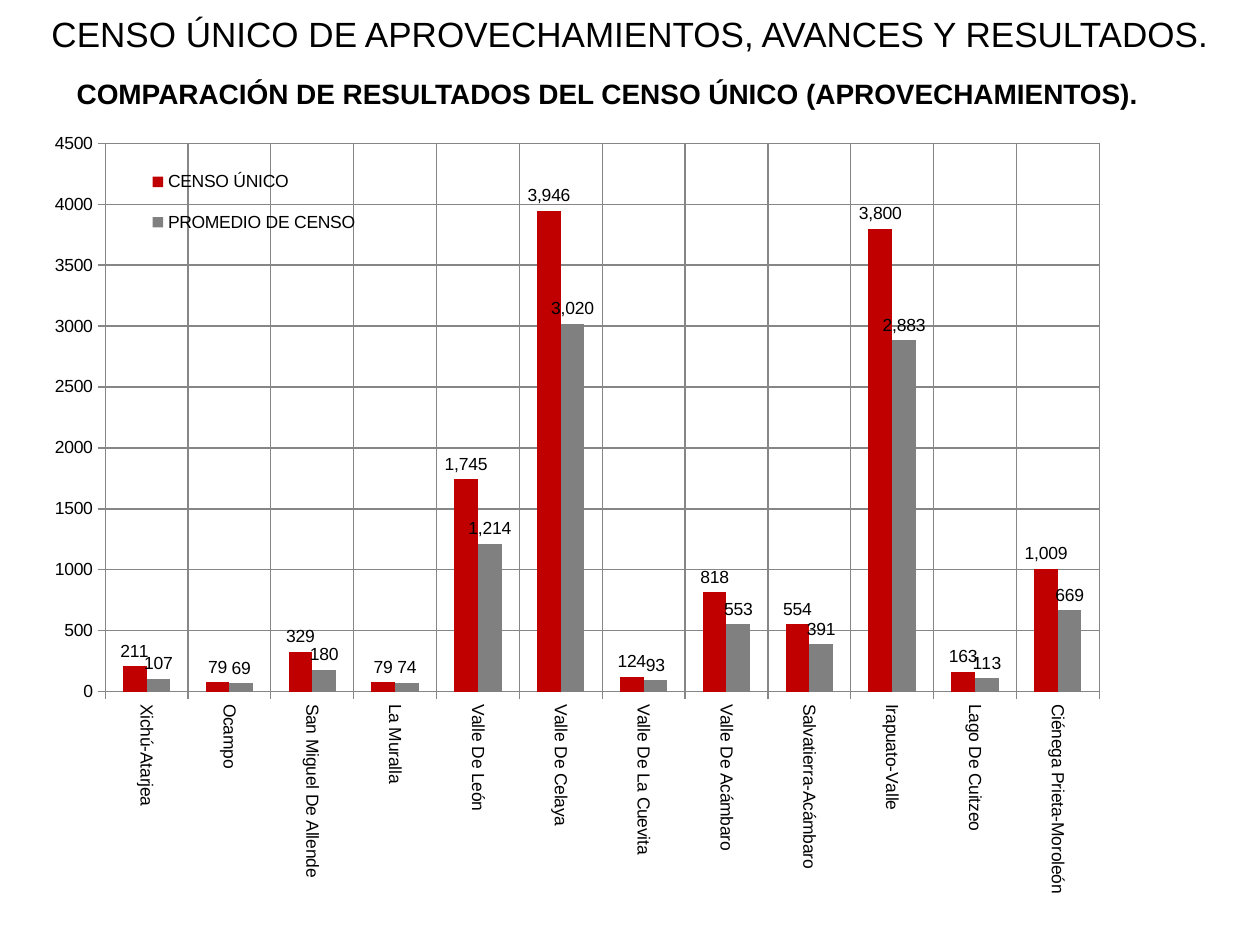
from lxml import etree
from pptx import Presentation
from pptx.chart.data import CategoryChartData
from pptx.dml.color import RGBColor
from pptx.enum.chart import (XL_CHART_TYPE, XL_LABEL_POSITION,
                             XL_LEGEND_POSITION, XL_TICK_MARK)
from pptx.enum.text import MSO_ANCHOR, PP_ALIGN
from pptx.oxml.ns import qn
from pptx.util import Pt

COLUMNS = XL_CHART_TYPE.COLUMN_CLUSTERED
LABEL_ABOVE = XL_LABEL_POSITION.OUTSIDE_END
LEGEND_RIGHT = XL_LEGEND_POSITION.RIGHT
TICK_OUT, TICK_NONE = XL_TICK_MARK.OUTSIDE, XL_TICK_MARK.NONE
MIDDLE, TOP = MSO_ANCHOR.MIDDLE, MSO_ANCHOR.TOP
CENTER, LEFT = PP_ALIGN.CENTER, PP_ALIGN.LEFT

FONT = "Arial"
BLACK = RGBColor(0x00, 0x00, 0x00)
RED = RGBColor(0xC0, 0x00, 0x00)
GRAY = RGBColor(0x80, 0x80, 0x80)
GRID_GRAY = RGBColor(0x86, 0x86, 0x86)

CENSUS = [
    ("Xichú-Atarjea", 211, 107),
    ("Ocampo", 79, 69),
    ("San Miguel De Allende", 329, 180),
    ("La Muralla", 79, 74),
    ("Valle De León", 1745, 1214),
    ("Valle De Celaya", 3946, 3020),
    ("Valle De La Cuevita", 124, 93),
    ("Valle De Acámbaro", 818, 553),
    ("Salvatierra-Acámbaro", 554, 391),
    ("Irapuato-Valle", 3800, 2883),
    ("Lago De Cuitzeo", 163, 113),
    ("Ciénega Prieta-Moroleón", 1009, 669),
]
SERIES = [("CENSO ÚNICO", RED), ("PROMEDIO DE CENSO", GRAY)]


def style_font(font, size, bold=False):
    font.name = FONT
    font.size = Pt(size)
    font.bold = bold
    font.color.rgb = BLACK


def add_heading(slide, text, box, size, bold=False, align=LEFT, anchor=TOP):
    shape = slide.shapes.add_textbox(*map(Pt, box))
    frame = shape.text_frame
    frame.word_wrap = True
    frame.vertical_anchor = anchor
    frame.text = text
    paragraph = frame.paragraphs[0]
    paragraph.alignment = align
    style_font(paragraph.runs[0].font, size, bold)
    return paragraph


def set_layout(element, index, x, y, w, h, inner=False):
    """Place a chart part by fractions of the chart area."""
    for existing in element.findall(qn("c:layout")):
        element.remove(existing)
    layout = etree.Element(qn("c:layout"))
    element.insert(index, layout)
    manual = etree.SubElement(layout, qn("c:manualLayout"))
    settings = [("layoutTarget", "inner")] if inner else []
    settings += [("xMode", "edge"), ("yMode", "edge"),
                 ("x", x), ("y", y), ("w", w), ("h", h)]
    for tag, value in settings:
        etree.SubElement(manual, qn(f"c:{tag}")).set("val", str(value))


def style_axis(axis):
    axis.has_major_gridlines = True
    axis.major_tick_mark = TICK_OUT
    axis.minor_tick_mark = TICK_NONE
    for line in (axis.format.line, axis.major_gridlines.format.line):
        line.color.rgb = GRID_GRAY
        line.width = Pt(0.75)
    style_font(axis.tick_labels.font, 10)


def style_series(series, color):
    series.format.fill.solid()
    series.format.fill.fore_color.rgb = color
    series.invert_if_negative = False
    labels = series.data_labels
    labels.show_value = True
    labels.number_format = "#,##0"
    labels.number_format_is_linked = False
    labels.position = LABEL_ABOVE
    style_font(labels.font, 10)


def add_census_chart(slide, box):
    names, *columns = zip(*CENSUS)
    data = CategoryChartData()
    data.categories = names
    for (name, _), values in zip(SERIES, columns):
        data.add_series(name, values)
    chart = slide.shapes.add_chart(COLUMNS, *map(Pt, box), data).chart
    chart.has_title = False
    style_font(chart.font, 10)

    plot = chart.plots[0]
    plot.gap_width = 150
    plot.overlap = 0
    plot.vary_by_categories = False
    for series, (_, color) in zip(plot.series, SERIES):
        style_series(series, color)

    style_axis(chart.category_axis)
    style_axis(chart.value_axis)
    chart.value_axis.minimum_scale = 0
    chart.value_axis.maximum_scale = 4500
    chart.value_axis.major_unit = 500
    label_body = chart.category_axis._element.find(qn("c:txPr")).find(qn("a:bodyPr"))
    label_body.set("rot", "5400000")
    label_body.set("vert", "horz")

    chart.has_legend = True
    legend = chart.legend
    legend.position = LEGEND_RIGHT
    legend.include_in_layout = True
    style_font(legend.font, 10)
    set_layout(legend._element, 1, 0.1, 0.05, 0.2, 0.13)
    plot_area = chart._chartSpace.find(qn("c:chart")).find(qn("c:plotArea"))
    set_layout(plot_area, 0, 0.07, 0.04, 0.87, 0.7, inner=True)


def main():
    presentation = Presentation()
    presentation.slide_width = Pt(720)
    presentation.slide_height = Pt(540)
    slide = presentation.slides.add_slide(presentation.slide_layouts[6])
    title = add_heading(
        slide, "CENSO ÚNICO DE APROVECHAMIENTOS, AVANCES Y RESULTADOS.",
        (0, 3.6, 720, 34), 20, align=CENTER, anchor=MIDDLE)
    title.line_spacing = 0.9
    add_heading(
        slide, "COMPARACIÓN DE RESULTADOS DEL CENSO ÚNICO (APROVECHAMIENTOS).",
        (36.7, 40.3, 646.6, 26.6), 16, bold=True)
    add_census_chart(slide, (14.4, 64, 653, 448.6))
    presentation.save("out.pptx")


if __name__ == "__main__":
    main()
